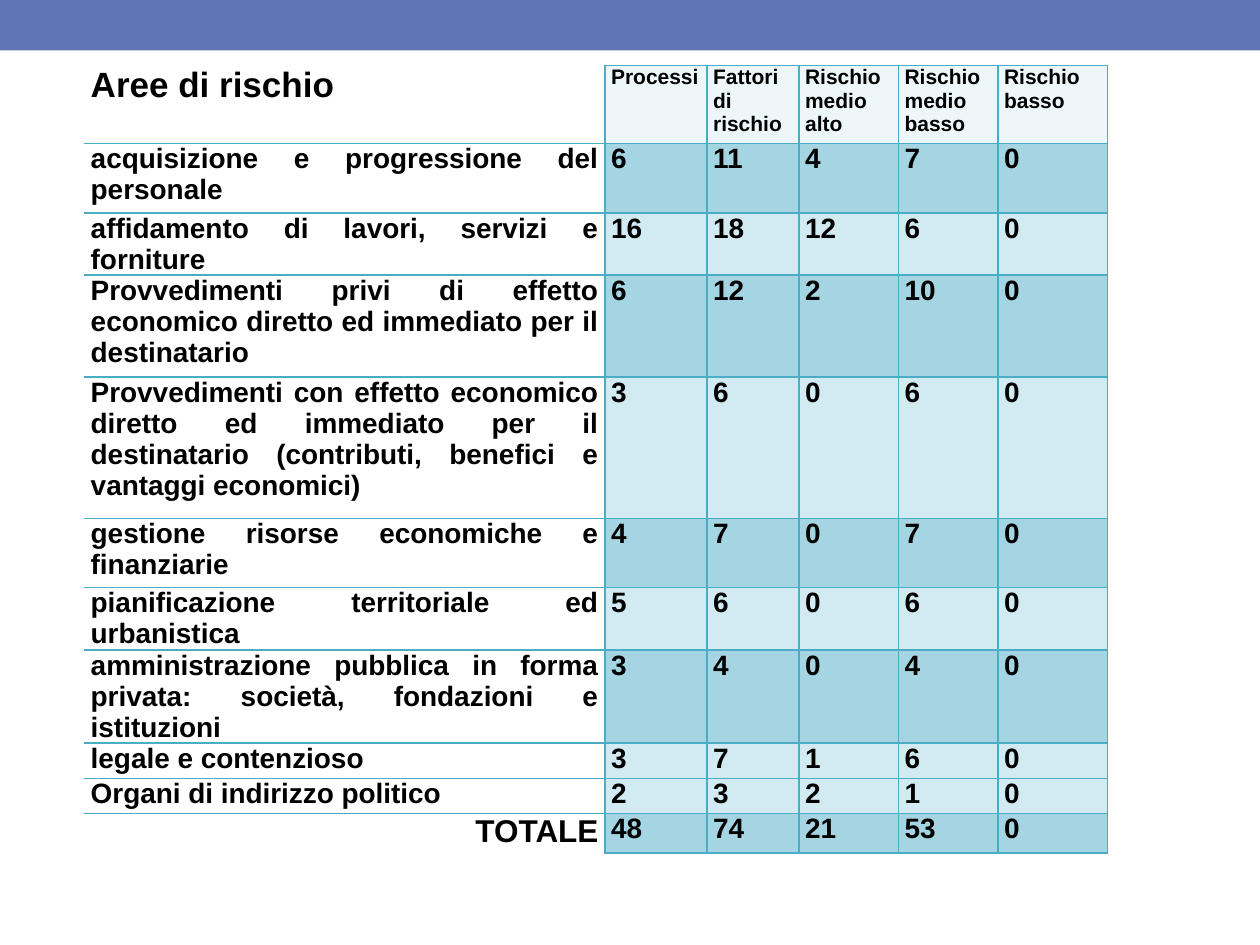
import pptx
import pptx.util
import pptx.dml.color
import pptx.enum.shapes
import pptx.enum.text
import pptx.oxml.ns
from lxml import etree

Inches = pptx.util.Inches
ALIGN = pptx.enum.text.PP_ALIGN
LINE, WHITE, HEAD, DARK, LIGHT = "4BACC6", "FFFFFF", "EDF6F9", "A5D5E2", "D2EAF1"

WIDTHS = [4.13, 0.81, 0.73, 0.79, 0.79, 0.87]
# row height, band colour, cell texts
ROWS = [
    (0.62, HEAD, ["Aree di rischio", "Processi", "Fattori di rischio",
                  "Rischio medio alto", "Rischio medio basso", "Rischio basso"]),
    (0.55, DARK, ["acquisizione e progressione del personale", 6, 11, 4, 7, 0]),
    (0.37, LIGHT, ["affidamento di lavori, servizi e forniture", 16, 18, 12, 6, 0]),
    (0.81, DARK, ["Provvedimenti privi di effetto economico diretto ed immediato "
                  "per il destinatario", 6, 12, 2, 10, 0]),
    (1.12, LIGHT, ["Provvedimenti con effetto economico diretto ed immediato per il "
                   "destinatario (contributi, benefici e vantaggi economici)",
                   3, 6, 0, 6, 0]),
    (0.55, DARK, ["gestione risorse economiche e finanziarie", 4, 7, 0, 7, 0]),
    (0.37, LIGHT, ["pianificazione territoriale ed urbanistica", 5, 6, 0, 6, 0]),
    (0.73, DARK, ["amministrazione pubblica in forma privata: società, fondazioni "
                  "e istituzioni", 3, 4, 0, 4, 0]),
    (0.28, LIGHT, ["legale e contenzioso", 3, 7, 1, 6, 0]),
    (0.28, LIGHT, ["Organi di indirizzo politico", 2, 3, 2, 1, 0]),
    (0.31, DARK, ["TOTALE", 48, 74, 21, 53, 0]),
]


def paint(fill, color):
    fill.solid()
    fill.fore_color.rgb = pptx.dml.color.RGBColor.from_string(color)


def write(cell, text, size=16, align=ALIGN.JUSTIFY, color="000000"):
    cell.margin_left = cell.margin_right = Inches(0.05)
    cell.margin_top = cell.margin_bottom = 0
    par = cell.text_frame.paragraphs[0]
    par.alignment = align
    run = par.add_run()
    run.text = str(text)
    run.font.name, run.font.size, run.font.bold = "Arial", pptx.util.Pt(size), True
    paint(run.font.fill, color)


def edge(cell, sides):
    """Draw the cell borders named in sides; hide the others."""
    qn = pptx.oxml.ns.qn
    props = cell._tc.get_or_add_tcPr()
    for side in "LRTB":
        line = etree.SubElement(props, qn("a:ln" + side), w="12700")
        if side in sides:
            fill = etree.SubElement(line, qn("a:solidFill"))
            etree.SubElement(fill, qn("a:srgbClr"), val=LINE)
        else:
            etree.SubElement(line, qn("a:noFill"))


def main():
    deck = pptx.Presentation()
    deck.slide_width, deck.slide_height = Inches(10), Inches(7.5)
    slide = deck.slides.add_slide(deck.slide_layouts[6])

    bar = slide.shapes.add_shape(pptx.enum.shapes.MSO_SHAPE.RECTANGLE,
                                 0, 0, Inches(10), Inches(0.4))
    bar.shadow.inherit = False
    bar.line.fill.background()
    paint(bar.fill, "6076B4")

    high = sum(row[0] for row in ROWS)
    table = slide.shapes.add_table(
        len(ROWS), len(WIDTHS), Inches(0.67), Inches(0.52),
        Inches(sum(WIDTHS)), Inches(high)).table
    table.first_row = table.horz_banding = False
    for col, width in zip(table.columns, WIDTHS):
        col.width = Inches(width)

    last = len(ROWS) - 1
    for r, (height, band, texts) in enumerate(ROWS):
        table.rows[r].height = Inches(height)
        for c, text in enumerate(texts):
            cell = table.cell(r, c)
            size, align, sides = 16, ALIGN.JUSTIFY, "LRTB"
            if r == 0:
                size = 12 if c else 20
            if c == 0:
                sides = "R" + ("T" if r > 0 else "") + ("B" if r < last else "")
                if r == last:
                    size, align = 18, ALIGN.RIGHT
            write(cell, text, size=size, align=align)
            edge(cell, sides)
            paint(cell.fill, band if c else WHITE)

    deck.save("out.pptx")


if __name__ == "__main__":
    main()
